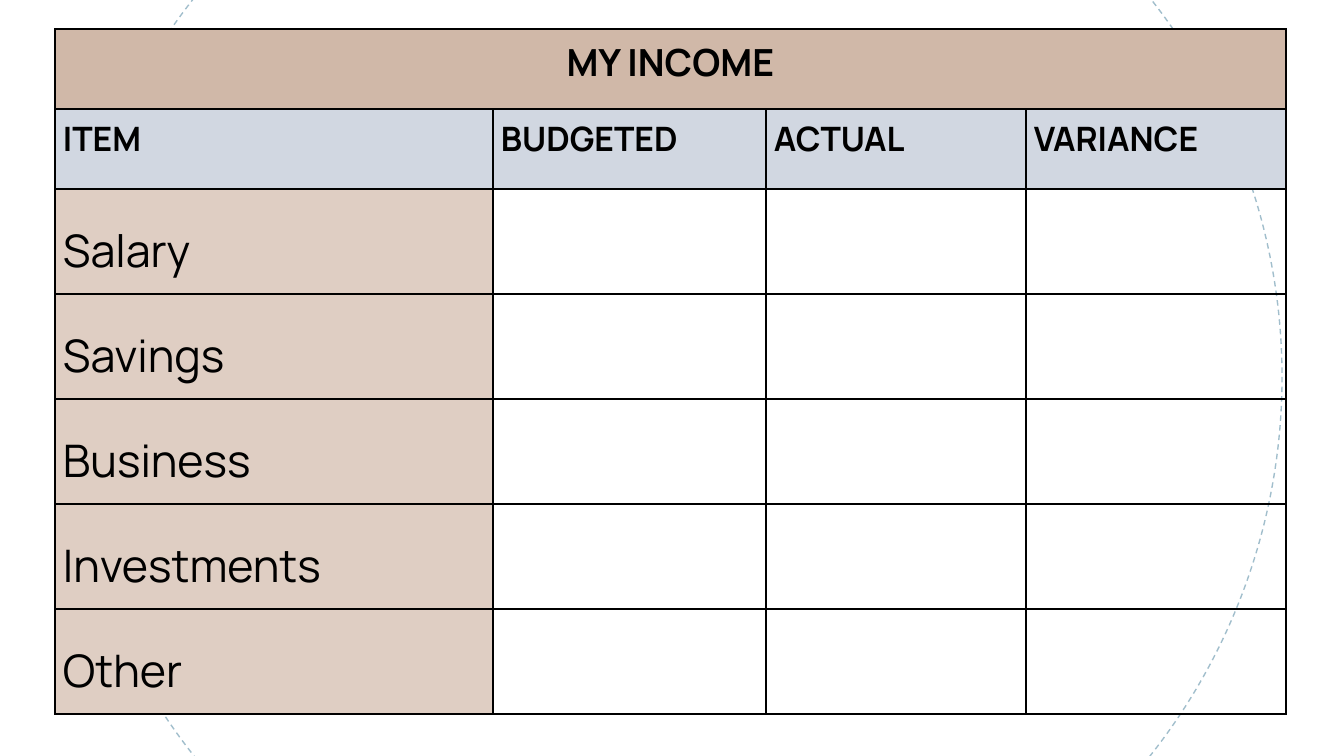
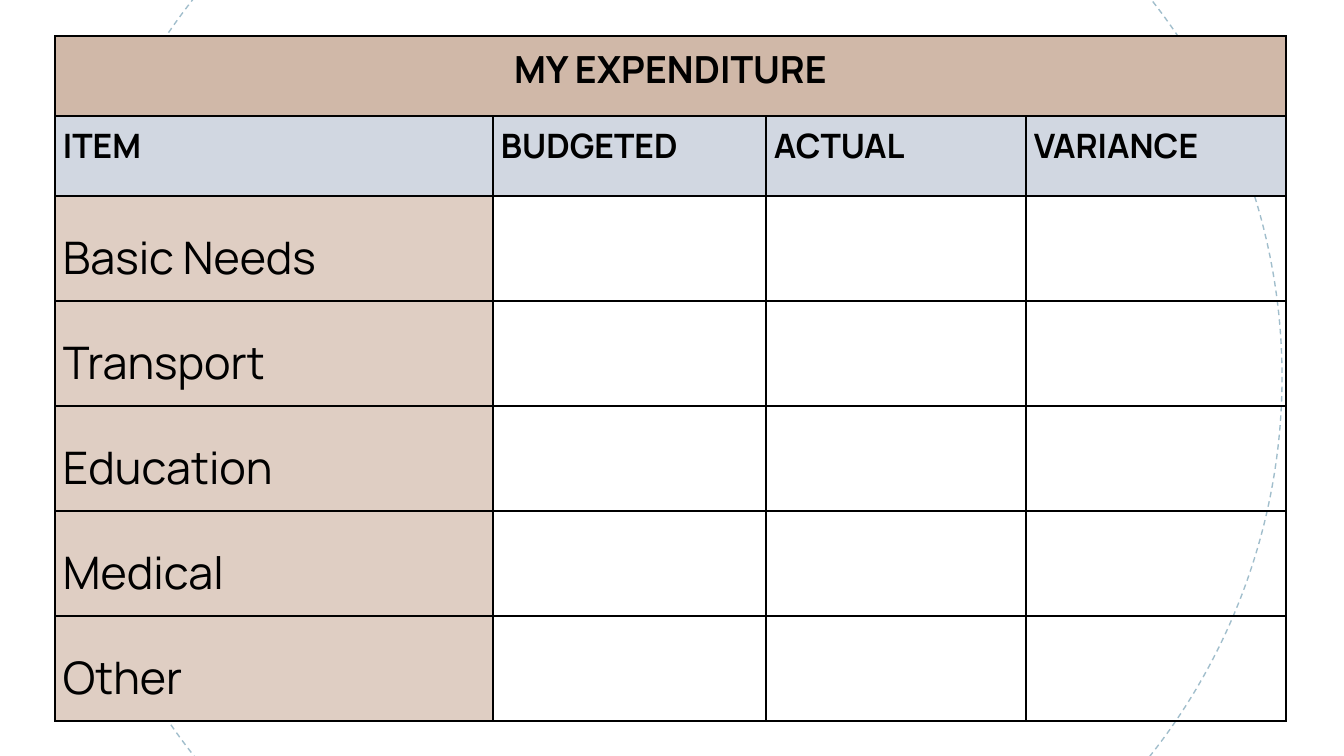
from lxml.etree import SubElement
from pptx import Presentation
from pptx.dml.color import RGBColor
from pptx.enum.dml import MSO_LINE_DASH_STYLE as Dash
from pptx.enum.shapes import MSO_SHAPE as Shape
from pptx.enum.text import PP_ALIGN as Align
from pptx.oxml.ns import qn
from pptx.util import Emu, Pt

BLACK = RGBColor(0x00, 0x00, 0x00)
WHITE = RGBColor(0xFF, 0xFF, 0xFF)
CIRCLE_BLUE = RGBColor(0xA1, 0xBE, 0xCC)
TITLE_TAN = RGBColor(0xD0, 0xB8, 0xA8)
HEADER_BLUE = RGBColor(0xD1, 0xD7, 0xE1)
ITEM_TAN = RGBColor(0xDF, 0xCE, 0xC3)

FONT = "Manrope"
SLIDE_WIDTH, SLIDE_HEIGHT = 1344, 756
PX_PER_INCH = 134.4
BLANK_LAYOUT = 6

TABLE_LEFT = 55
COLUMN_WIDTHS = [438, 273, 260, 260]
HEADING_HEIGHT, ITEM_HEIGHT = 80, 105
CELL_MARGIN = 8
HEADERS = ["ITEM", "BUDGETED", "ACTUAL", "VARIANCE"]

# Heading, top of the table, items
BUDGETS = [
    ("MY INCOME", 29,
     ["Salary", "Savings", "Business", "Investments", "Other"]),
    ("MY EXPENDITURE", 36,
     ["Basic Needs", "Transport", "Education", "Medical", "Other"]),
]


def px(length):
    return Emu(round(length * 914400 / PX_PER_INCH))


class BudgetDeck:
    def __init__(self):
        self.presentation = Presentation()
        self.presentation.slide_width = px(SLIDE_WIDTH)
        self.presentation.slide_height = px(SLIDE_HEIGHT)
        self.slide = None

    def add_slide(self):
        layout = self.presentation.slide_layouts[BLANK_LAYOUT]
        self.slide = self.presentation.slides.add_slide(layout)
        background = self.slide.background.fill
        background.solid()
        background.fore_color.rgb = WHITE
        self.add_circle(62, -233, 1220)

    def add_circle(self, left, top, diameter):
        circle = self.slide.shapes.add_shape(
            Shape.OVAL, px(left), px(top), px(diameter), px(diameter))
        circle.shadow.inherit = False
        circle.fill.background()
        circle.line.color.rgb = CIRCLE_BLUE
        circle.line.width = Pt(0.75)
        circle.line.dash_style = Dash.DASH

    def add_budget_table(self, heading, top, items):
        heights = [HEADING_HEIGHT] * 2 + [ITEM_HEIGHT] * len(items)
        table = self.slide.shapes.add_table(
            len(heights), len(COLUMN_WIDTHS), px(TABLE_LEFT), px(top),
            px(sum(COLUMN_WIDTHS)), px(sum(heights))).table
        table.first_row = table.horz_banding = False
        for column, width in zip(table.columns, COLUMN_WIDTHS):
            column.width = px(width)
        for row, height in zip(table.rows, heights):
            row.height = px(height)
        for cell in table.iter_cells():
            self.format_cell(cell)

        table.cell(0, 0).merge(table.cell(0, len(COLUMN_WIDTHS) - 1))
        self.fill_cell(table.cell(0, 0), heading, TITLE_TAN, 20, True, 1.15, Align.CENTER)
        for column, header in enumerate(HEADERS):
            self.fill_cell(table.cell(1, column), header, HEADER_BLUE, 18, True, 1.15)
        for row, item in enumerate(items, start=2):
            self.fill_cell(table.cell(row, 0), item, ITEM_TAN, 24, False, 1.5)

    def format_cell(self, cell):
        """Give a cell its margins, black borders and no fill."""
        cell.margin_left = cell.margin_right = px(CELL_MARGIN)
        cell.margin_top = cell.margin_bottom = 0
        properties = cell._tc.get_or_add_tcPr()
        for side in ("lnL", "lnR", "lnT", "lnB"):
            border = SubElement(properties, qn(f"a:{side}"), w=str(Pt(1)))
            fill = SubElement(border, qn("a:solidFill"))
            SubElement(fill, qn("a:srgbClr"), val=str(BLACK))
        cell.fill.background()

    def fill_cell(self, cell, text, color, size, bold, spacing, alignment=Align.LEFT):
        cell.fill.solid()
        cell.fill.fore_color.rgb = color
        cell.text_frame.text = text
        paragraph = cell.text_frame.paragraphs[0]
        paragraph.alignment = alignment
        paragraph.line_spacing = spacing
        font = paragraph.runs[0].font
        font.name = FONT
        font.size = Pt(size)
        font.bold = bold
        font.color.rgb = BLACK


def main():
    deck = BudgetDeck()
    for heading, top, items in BUDGETS:
        deck.add_slide()
        deck.add_budget_table(heading, top, items)
    deck.presentation.save("out.pptx")


if __name__ == "__main__":
    main()
